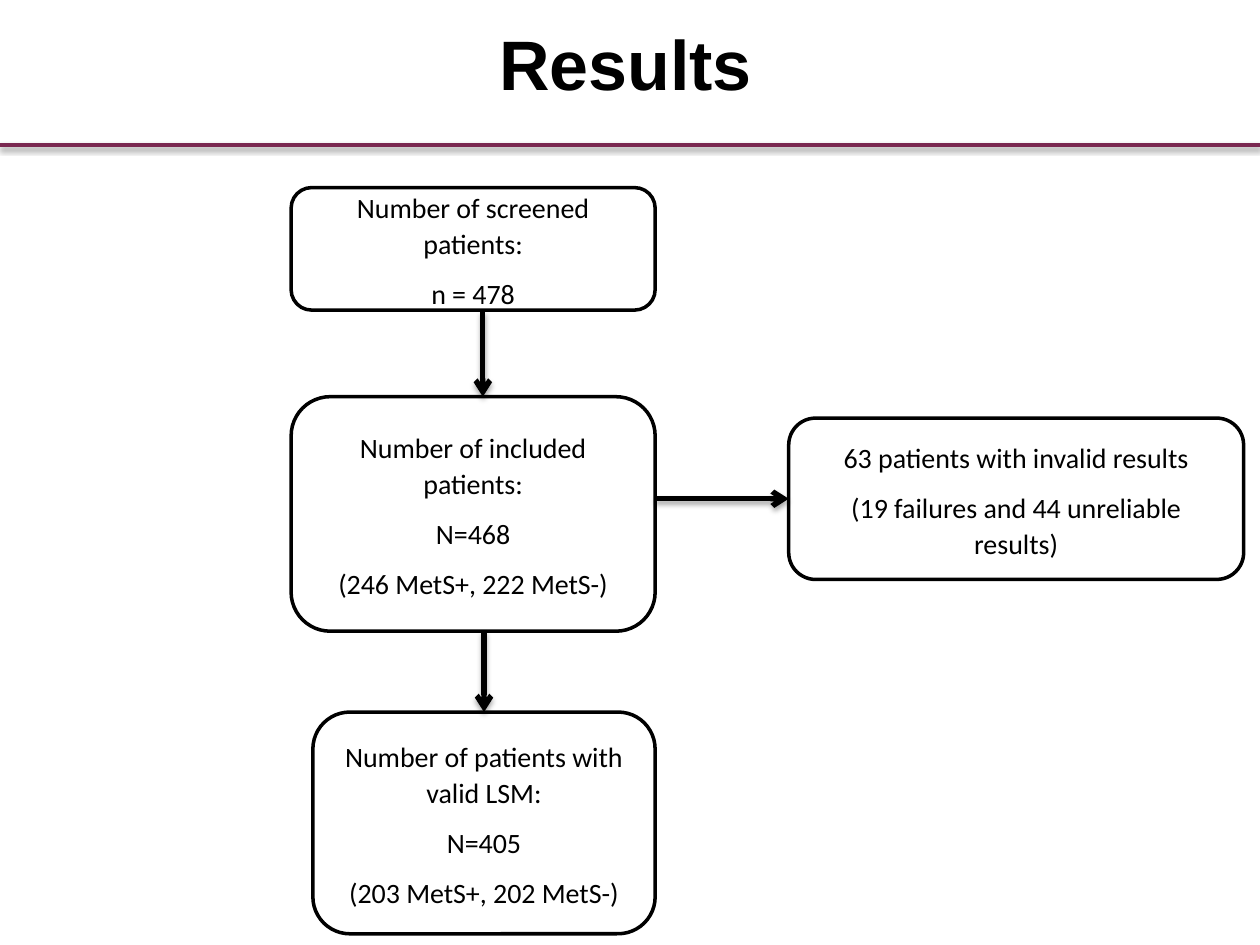
from lxml import etree
from pptx import Presentation
from pptx.dml.color import RGBColor
from pptx.enum import shapes, text
from pptx.oxml import ns
from pptx.util import Pt

BLACK, WHITE, PLUM = "000000", "FFFFFF", "7A2851"
TOP, LEFT = 0, 1  # connection sites of a rectangle
STEP_FORMAT = {"alignment": text.PP_ALIGN.CENTER, "line_spacing": 1.07, "space_after": Pt(8)}
STEP_FONT = {"name": "Calibri", "size": Pt(16)}
TITLE_FONT = {"name": "Arial", "size": Pt(40), "bold": True}


def colour(hex_code):
    return RGBColor.from_string(hex_code)


def apply(target, values):
    for name, value in values.items():
        setattr(target, name, value)


def child(parent, tag, **attributes):
    return etree.SubElement(parent, ns.qn(tag), {k: str(v) for k, v in attributes.items()})


def write(frame, lines, font, paragraph_format):
    """Fill a text frame with one paragraph per line."""
    for index, line in enumerate(lines):
        paragraph = frame.paragraphs[0] if index == 0 else frame.add_paragraph()
        apply(paragraph, paragraph_format)
        run = paragraph.add_run()
        run.text = line
        apply(run.font, font)
        run.font.color.rgb = colour(BLACK)


def add_line(slide, start, end, hex_code, width, opacity, distance, arrow=False):
    """Draw a straight line with a soft shadow below it."""
    line = slide.shapes.add_connector(
        shapes.MSO_CONNECTOR.STRAIGHT, *(Pt(v) for v in (*start, *end)))
    line.line.color.rgb = colour(hex_code)
    line.line.width = Pt(width)
    properties = line._element.spPr
    if arrow:
        child(properties.find(ns.qn("a:ln")), "a:tailEnd", type="arrow")
    shadow = child(child(properties, "a:effectLst"), "a:outerShdw", blurRad=Pt(3.1),
                   dist=Pt(distance), dir=90 * 60000, rotWithShape=0)
    child(child(shadow, "a:srgbClr", val=BLACK), "a:alpha", val=opacity * 1000)
    return line


def add_step(slide, box, lines):
    step = slide.shapes.add_shape(
        shapes.MSO_SHAPE.ROUNDED_RECTANGLE, *(Pt(v) for v in box))
    step.shadow.inherit = False
    step.fill.solid()
    step.fill.fore_color.rgb = colour(WHITE)
    step.line.color.rgb = colour(BLACK)
    step.line.width = Pt(2)
    apply(step.text_frame, {"word_wrap": True, "vertical_anchor": text.MSO_ANCHOR.MIDDLE})
    write(step.text_frame, lines, STEP_FONT, STEP_FORMAT)
    return step


def add_header(slide, box, title):
    left, top, width, height = box
    heading = slide.shapes.add_textbox(Pt(277.2), Pt(top + 8), Pt(160.6), Pt(55.4))
    apply(heading.text_frame, {"word_wrap": False,
                               "auto_size": text.MSO_AUTO_SIZE.SHAPE_TO_FIT_TEXT})
    write(heading.text_frame, [title], TITLE_FONT, {"alignment": text.PP_ALIGN.CENTER})
    bottom = top + height
    add_line(slide, (left, bottom), (left + width, bottom), PLUM, 2, 38, 1.6)


def add_flow(slide, box):
    """Place three steps down a column and the excluded patients beside them."""
    left, top, width, height = box
    column, side = 208, 260
    right = left + column
    screened_h, included_h, valid_h, invalid_h = 70, 134, 126.7, 92.2
    included_y = top + 119.5
    valid_y = top + height - valid_h
    invalid_x, invalid_y = left + width - side, included_y + 12.2
    valid_x = left + 12.4

    add_step(slide, (left, top, column, screened_h),
             ["Number of screened patients:", "n = 478"])
    add_step(slide, (left, included_y, column, included_h),
             ["Number of included patients:", "N=468", "(246 MetS+, 222 MetS-)"])
    valid = add_step(slide, (valid_x, valid_y, right - valid_x, valid_h),
                     ["Number of patients with valid LSM:", "N=405", "(203 MetS+, 202 MetS-)"])
    invalid = add_step(slide, (invalid_x, invalid_y, side, invalid_h),
                       ["63 patients with invalid results",
                        "(19 failures and 44 unreliable results)"])

    screened_x = left + 109.5
    valid_mid = (valid_x + right) / 2
    invalid_mid = invalid_y + invalid_h / 2
    arrows = [
        ((screened_x, top + screened_h + 1), (screened_x, included_y), None, None),
        ((valid_mid, included_y + included_h), (valid_mid, valid_y), valid, TOP),
        ((right, invalid_mid), (invalid_x, invalid_mid), invalid, LEFT),
    ]
    for start, end, target, site in arrows:
        arrow = add_line(slide, start, end, BLACK, 3, 35, 1.8, arrow=True)
        if target is not None:
            arrow.end_connect(target, site)


def main():
    deck = Presentation()
    deck.slide_width, deck.slide_height = Pt(720), Pt(540)
    slide = deck.slides.add_slide(deck.slide_layouts[6])
    add_flow(slide, (166.4, 107.2, 544.3, 426.4))
    add_header(slide, (0, 0, 720, 83), "Results")
    deck.save("out.pptx")


if __name__ == "__main__":
    main()
